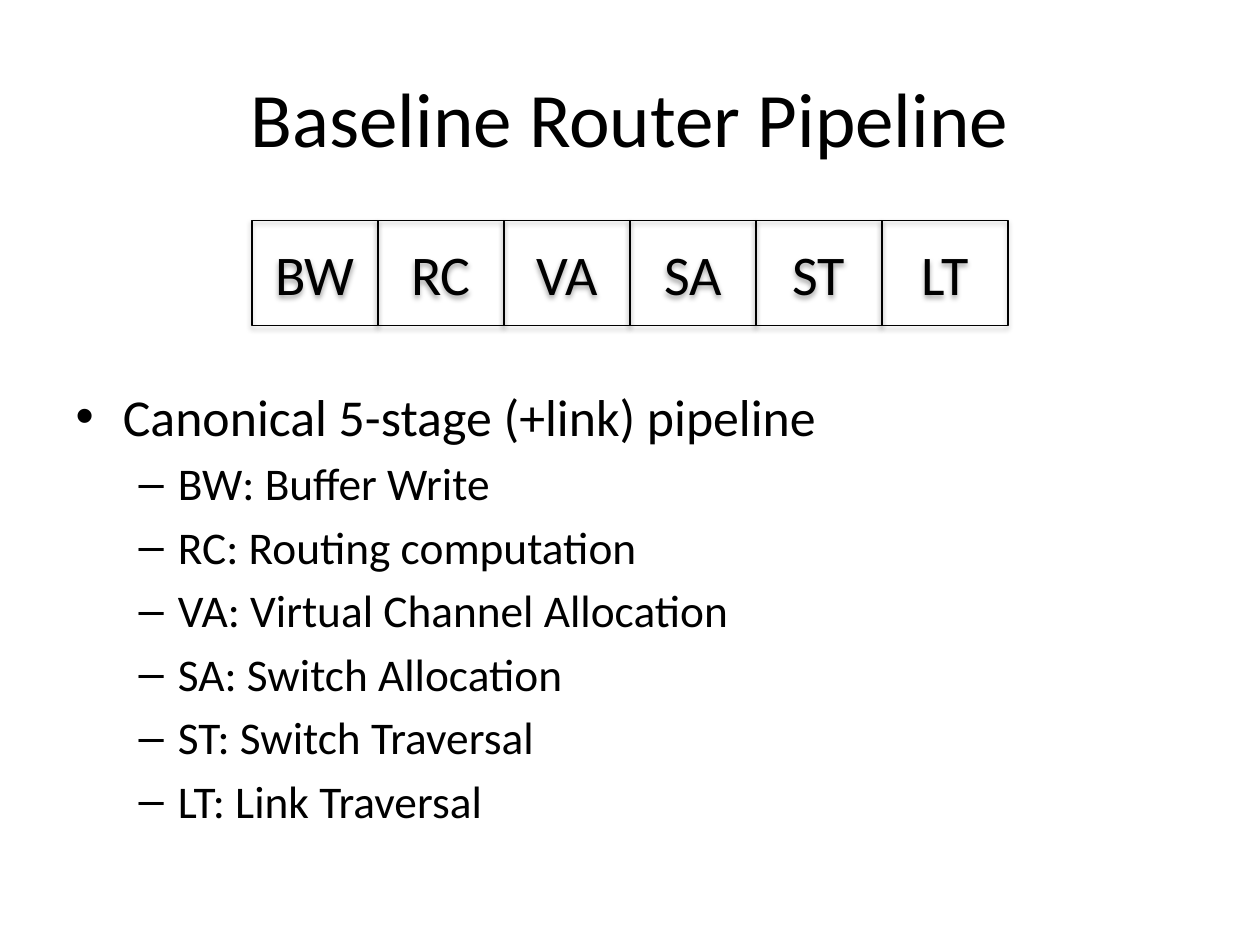
from dataclasses import dataclass

from lxml.etree import SubElement
from pptx import Presentation
from pptx.dml.color import RGBColor
from pptx.enum.shapes import MSO_SHAPE
from pptx.enum.text import MSO_ANCHOR, MSO_AUTO_SIZE, PP_ALIGN
from pptx.oxml.ns import qn
from pptx.util import Cm, Pt


@dataclass(frozen=True)
class Theme:
    font: str = "Calibri"
    ink: RGBColor = RGBColor(0, 0, 0)
    title: Pt = Pt(44)
    stage: Pt = Pt(32)
    heading: Pt = Pt(29.6)
    item: Pt = Pt(25.9)
    outline: Pt = Pt(0.75)


THEME = Theme()

STAGES = {
    "BW": "Buffer Write",
    "RC": "Routing computation",
    "VA": "Virtual Channel Allocation",
    "SA": "Switch Allocation",
    "ST": "Switch Traversal",
    "LT": "Link Traversal",
}


def style_runs(paragraph, size):
    for run in paragraph.runs:
        run.font.name = THEME.font
        run.font.size = size
        run.font.color.rgb = THEME.ink


def add_soft_shadow(shape):
    shape.shadow.inherit = False
    effects = shape._element.spPr.find(qn("a:effectLst"))
    shadow = SubElement(
        effects, qn("a:outerShdw"), blurRad=str(Pt(3.1)), dist=str(Pt(1.8)),
        dir="5400000", rotWithShape="0",
    )
    color = SubElement(shadow, qn("a:srgbClr"), val=str(THEME.ink))
    SubElement(color, qn("a:alpha"), val="35000")


prs = Presentation()
prs.slide_width, prs.slide_height = Cm(25.4), Cm(19.05)
slide = prs.slides.add_slide(prs.slide_layouts[1])

# Title
title = slide.shapes.title
title.left, title.top, title.width, title.height = Cm(1.27), Cm(0.76), Cm(22.86), Cm(3.18)
title.text_frame.text = "Baseline Router Pipeline"
title.text_frame.vertical_anchor = MSO_ANCHOR.MIDDLE
title.text_frame.paragraphs[0].alignment = PP_ALIGN.CENTER
style_runs(title.text_frame.paragraphs[0], THEME.title)

# Legend of the stages
legend = slide.placeholders[1]
legend.left, legend.top, legend.width, legend.height = Cm(1.27), Cm(7.62), Cm(22.86), Cm(9.4)
legend.text_frame.auto_size = MSO_AUTO_SIZE.NONE
legend.text_frame.text = "Canonical 5-stage (+link) pipeline"
heading = legend.text_frame.paragraphs[0]
heading.space_before = Pt(0)
style_runs(heading, THEME.heading)
for abbreviation, meaning in STAGES.items():
    item = legend.text_frame.add_paragraph()
    item.text = f"{abbreviation}: {meaning}"
    item.level = 1
    style_runs(item, THEME.item)

# Pipeline row
stage_width = Cm(2.54)
for column, abbreviation in enumerate(STAGES):
    stage = slide.shapes.add_shape(
        MSO_SHAPE.RECTANGLE, Cm(5.08) + column * stage_width, Cm(4.45), stage_width, Cm(2.12)
    )
    stage.fill.background()
    stage.line.color.rgb = THEME.ink
    stage.line.width = THEME.outline
    add_soft_shadow(stage)
    stage.text_frame.text = abbreviation
    stage.text_frame.vertical_anchor = MSO_ANCHOR.MIDDLE
    stage.text_frame.paragraphs[0].alignment = PP_ALIGN.CENTER
    style_runs(stage.text_frame.paragraphs[0], THEME.stage)

prs.save("out.pptx")
